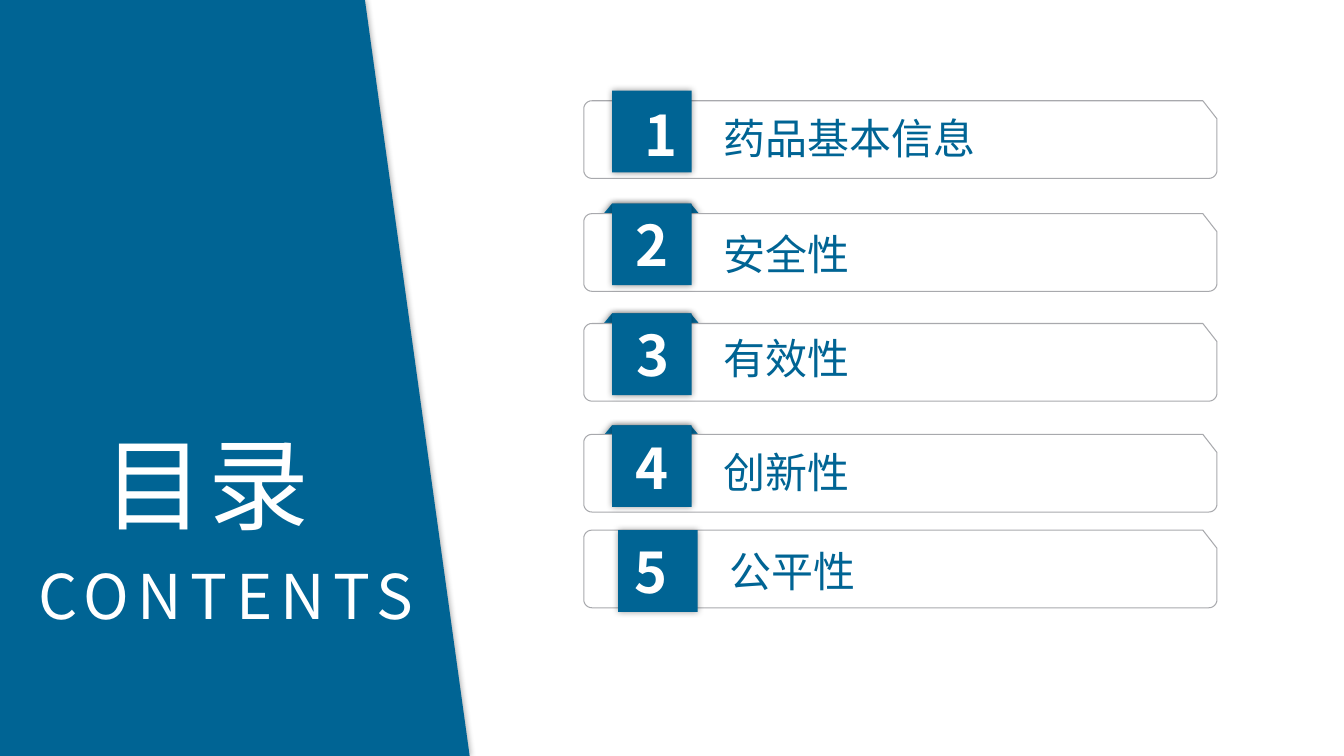
import math

from lxml import etree
from pptx import Presentation
from pptx import util as u
from pptx.dml.color import RGBColor
from pptx.enum import shapes, text
from pptx.oxml.ns import qn

PX = 9144  # 100 px to the inch
BLUE, WHITE, GREY = "006494", "FFFFFF", "A8A9AD"
FONT = "Noto Sans CJK SC"


def px(length):
    return u.Emu(round(length * PX))


def rgb(value):
    return RGBColor.from_string(value)


class ContentsSlide:
    def __init__(self, presentation):
        self.slide = presentation.slides.add_slide(presentation.slide_layouts[5])
        self.shapes = self.slide.shapes

    def paint(self, shape, fill, line=None, shadow=False):
        shape.shadow.inherit = False
        shape.fill.solid()
        shape.fill.fore_color.rgb = rgb(fill)
        if line:
            shape.line.color.rgb = rgb(line)
            shape.line.width = 0
        else:
            shape.line.fill.background()
        if shadow:
            effects = shape._element.spPr.find(qn("a:effectLst"))
            outer = etree.SubElement(effects, qn("a:outerShdw"), blurRad=str(u.Pt(5)),
                                     dist="0", dir="0", algn="ctr", rotWithShape="0")
            colour = etree.SubElement(outer, qn("a:srgbClr"), val="000000")
            etree.SubElement(colour, qn("a:alpha"), val="40000")

    def outline(self, points, fill, **style):
        """Draw a closed polygon through points given in px."""
        corners = [(px(x), px(y)) for x, y in points]
        builder = self.shapes.build_freeform(*corners[0], scale=1.0)
        builder.add_line_segments(corners[1:], close=True)
        self.paint(builder.convert_to_shape(), fill, **style)

    def tile(self, left, top):
        shape = self.shapes.add_shape(shapes.MSO_SHAPE.RECTANGLE,
                                      px(left), px(top), px(79), px(81))
        self.paint(shape, BLUE, shadow=True)

    def tab(self, top):
        """Draw the folded flap that shows above a card."""
        self.outline([(607, top), (685, top), (695, top + 12), (597, top + 12)],
                     BLUE, shadow=True)

    def card(self, top, left=579, width=628, height=77, radius=8):
        """Draw a card with three round corners and a cut one at top right."""
        right, bottom = left + width, top + height

        def arc(x, y, start):
            angles = [math.radians(start + 15 * step) for step in range(7)]
            return [(x + radius * math.cos(a), y + radius * math.sin(a)) for a in angles]

        self.outline([(right - 14, top), (right, top + 18),
                      *arc(right - radius, bottom - radius, 0),
                      *arc(left + radius, bottom - radius, 90),
                      *arc(left + radius, top + radius, 180)], WHITE, line=GREY)

    def set_words(self, shape, words, size, colour, bold=False, centred=False, spacing=0):
        frame = shape.text_frame
        frame.text = words
        frame.vertical_anchor = text.MSO_ANCHOR.TOP
        paragraph = frame.paragraphs[0]
        paragraph.alignment = text.PP_ALIGN.CENTER if centred else text.PP_ALIGN.LEFT
        run = paragraph.runs[0]
        font = run.font
        font.name, font.size, font.bold = FONT, u.Pt(size), bold
        font.color.rgb = rgb(colour)
        properties = run._r.get_or_add_rPr()
        if spacing:
            properties.set("spc", str(spacing * 100))
        latin = properties.find(qn("a:latin"))
        latin.addnext(etree.Element(qn("a:ea"), typeface=FONT))

    def label(self, left, top, width, height, words, size, colour, **style):
        shape = self.shapes.add_textbox(px(left), px(top), px(width), px(height))
        shape.text_frame.word_wrap = True
        self.set_words(shape, words, size, colour, **style)
        return shape

    def heading(self, shape):
        """Give a text on the side panel its margins and keep it on one line."""
        frame = shape.text_frame
        frame.word_wrap = False
        frame.auto_size = text.MSO_AUTO_SIZE.SHAPE_TO_FIT_TEXT
        frame.margin_left = frame.margin_right = px(13)
        frame.margin_top = frame.margin_bottom = px(7)

    def title(self, left, top, width, height, words):
        shape = self.shapes.title
        shape.left, shape.top, shape.width, shape.height = map(px, (left, top, width, height))
        self.set_words(shape, words, 72, WHITE, centred=True, spacing=3)
        shape.text_frame.paragraphs[0].line_spacing = 1.0
        shape.text_frame.paragraphs[0].space_before = u.Pt(0)
        self.heading(shape)
        self.shapes._spTree.append(shape._element)  # in front of the panel


# card top, tile left and top, tab, topic, topic left and top, number left, top and width
ROWS = [
    (100, 607, 90, False, "药品基本信息", 708, 107, 629, 95, 33),
    (212, 607, 202, True, "安全性", 708, 222, 621, 204, 50),
    (321, 607, 311, True, "有效性", 708, 325, 621, 313, 49),
    (431, 607, 422, True, "创新性", 708, 438, 620, 425, 52),
    (526, 613, 526, False, "公平性", 714, 536, 619, 528, 50),
]


def main():
    presentation = Presentation()
    presentation.slide_width, presentation.slide_height = px(1333), px(750)
    contents = ContentsSlide(presentation)

    contents.outline([(0, 0), (362, 0), (466, 751), (0, 751)], BLUE, shadow=True)
    contents.title(86, 411, 237, 135, "目录")
    contents.heading(contents.label(11, 546, 426, 88, "CONTENTS", 44, WHITE,
                                    centred=True, spacing=6))

    for number, row in enumerate(ROWS, 1):
        (card_top, tile_left, tile_top, has_tab, topic, topic_left, topic_top,
         number_left, number_top, number_width) = row
        if has_tab:
            contents.tab(tile_top)
        contents.card(card_top)
        contents.tile(tile_left, tile_top)
        contents.label(topic_left, topic_top, 273, 60, topic, 30, BLUE)
        contents.label(number_left, number_top, number_width, 77, str(number), 40,
                       WHITE, bold=True, centred=True)

    presentation.save("out.pptx")


if __name__ == "__main__":
    main()
